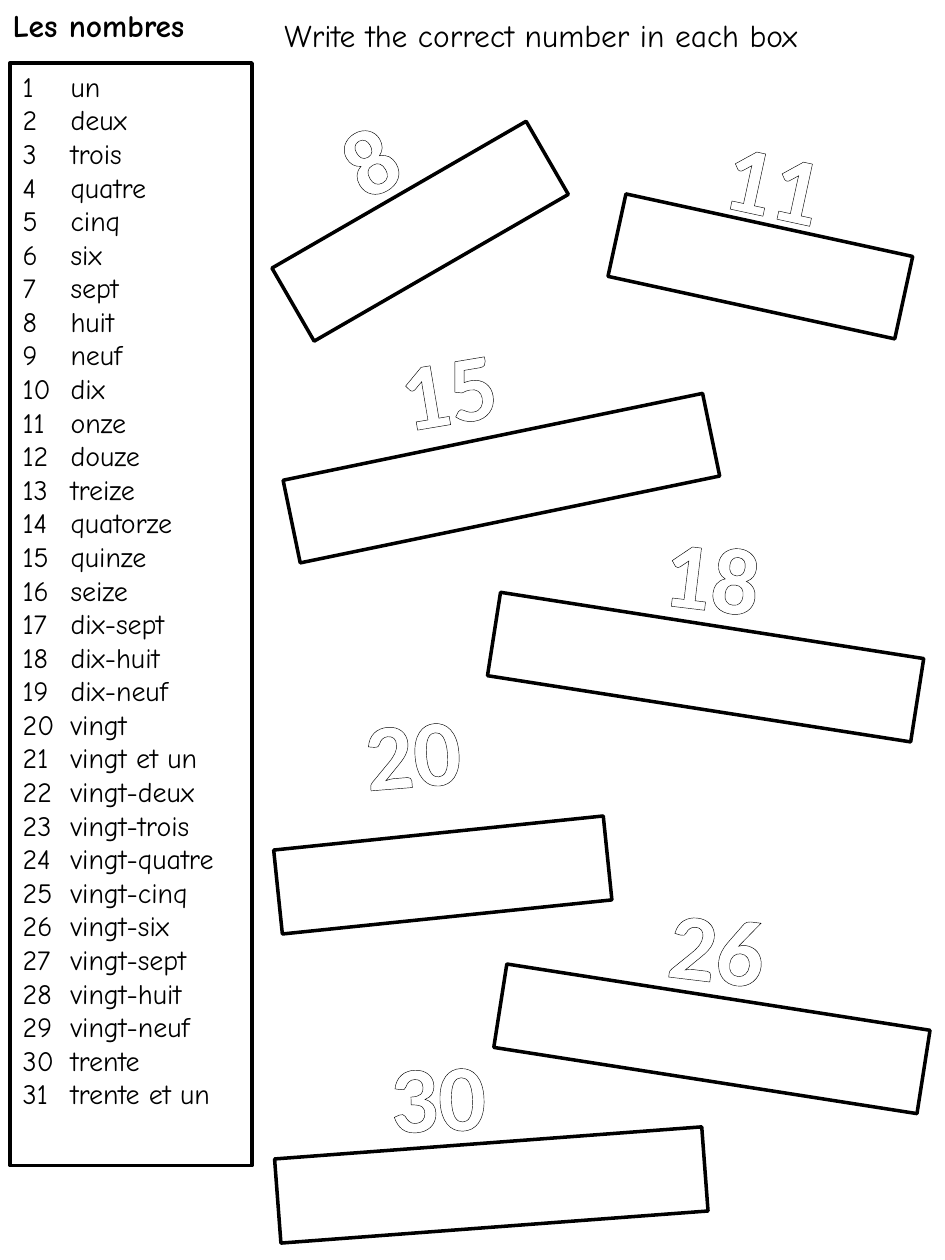
import lxml.etree
import pptx
import pptx.dml.color
import pptx.enum.shapes
import pptx.enum.text
import pptx.oxml.ns
import pptx.util

Inches = pptx.util.Inches
Pt = pptx.util.Pt
MSO_AUTO_SIZE = pptx.enum.text.MSO_AUTO_SIZE
MSO_ANCHOR = pptx.enum.text.MSO_ANCHOR
PP_ALIGN = pptx.enum.text.PP_ALIGN

BLACK = "000000"
WHITE = "FFFFFF"
HEADING = {"name": "Comic Neue", "size": Pt(18), "bold": True}
INSTRUCTION = {"name": "Comic Neue", "size": Pt(18), "bold": False}
ENTRY = {"name": "Comic Neue", "size": Pt(16), "bold": False}
NUMERAL = {"name": "Calibri", "size": Pt(54), "bold": True}

NUMBER_WORDS = [
    "un", "deux", "trois", "quatre", "cinq", "six", "sept", "huit", "neuf", "dix",
    "onze", "douze", "treize", "quatorze", "quinze", "seize", "dix-sept", "dix-huit",
    "dix-neuf", "vingt", "vingt et un", "vingt-deux", "vingt-trois", "vingt-quatre",
    "vingt-cinq", "vingt-six", "vingt-sept", "vingt-huit", "vingt-neuf", "trente",
    "trente et un",
]

ANSWER_HEIGHT = 0.67
NUMERAL_HEIGHT = 1.01
EXERCISES = [
    ("8", (2.63, 0.75, 0.59), 330, (2.17, 1.5, 2.33), 330),
    ("11", (5.66, 0.93, 0.97), 12.3, (4.87, 1.78, 2.33), 12.3),
    ("15", (3.07, 2.57, 0.97), 350.4, (2.28, 3.46, 3.4), 348.3),
    ("18", (5.17, 4.05, 0.97), 6.9, (3.9, 4.96, 3.4), 8.9),
    ("20", (2.79, 5.45, 0.97), 355.4, (2.2, 6.61, 2.63), 354.1),
    ("26", (5.21, 7, 0.97), 6.9, (3.95, 7.91, 3.4), 8.9),
    ("30", (2.99, 8.18, 0.97), 357.8, (2.2, 9.07, 3.4), 355.7),
]


def color(value):
    return pptx.dml.color.RGBColor.from_string(value)


def set_attributes(target, values):
    for name, value in values.items():
        setattr(target, name, value)


def lengths(box):
    return [Inches(value) for value in box]


def place(shape, box):
    set_attributes(shape, dict(zip(("left", "top", "width", "height"), lengths(box))))


def outline_box(shape):
    shape.fill.solid()
    shape.fill.fore_color.rgb = color(WHITE)
    shape.line.color.rgb = color(BLACK)
    shape.line.width = Pt(2)


def write(paragraph, text, font_format, text_color=BLACK, alignment=PP_ALIGN.LEFT):
    paragraph.alignment = alignment
    run = paragraph.add_run()
    run.text = text
    set_attributes(run.font, font_format)
    run.font.color.rgb = color(text_color)
    return run


def outline_text(run):
    properties = run.font._element
    line = lxml.etree.Element(pptx.oxml.ns.qn("a:ln"), w=str(Pt(0.8)))
    fill = lxml.etree.SubElement(line, pptx.oxml.ns.qn("a:solidFill"))
    lxml.etree.SubElement(fill, pptx.oxml.ns.qn("a:srgbClr"), val=BLACK)
    properties.insert(0, line)


def number_paragraph(paragraph):
    properties = paragraph._p.get_or_add_pPr()
    properties.set("marL", str(Inches(0.38)))
    properties.set("indent", str(Inches(-0.38)))
    for tag, attributes in (
        ("a:buFont", {"typeface": "+mj-lt"}),
        ("a:buAutoNum", {"type": "arabicPlain"}),
    ):
        lxml.etree.SubElement(properties, pptx.oxml.ns.qn(tag), attributes)


def add_heading(slide, box):
    title = slide.shapes.title
    place(title, box)
    set_attributes(title.text_frame, {
        "word_wrap": True,
        "auto_size": MSO_AUTO_SIZE.SHAPE_TO_FIT_TEXT,
        "vertical_anchor": MSO_ANCHOR.TOP,
    })
    write(title.text_frame.paragraphs[0], "Les nombres", HEADING)


def add_number_list(slide, box):
    body = slide.placeholders[1]
    place(body, box)
    outline_box(body)
    frame = body.text_frame
    set_attributes(frame, {
        "word_wrap": True,
        "auto_size": MSO_AUTO_SIZE.NONE,
        "vertical_anchor": MSO_ANCHOR.TOP,
    })
    for index, word in enumerate(NUMBER_WORDS):
        paragraph = frame.add_paragraph() if index else frame.paragraphs[0]
        number_paragraph(paragraph)
        paragraph.space_before = Pt(0)
        write(paragraph, word, ENTRY)


def add_instruction(slide, box):
    frame = slide.shapes.add_textbox(*lengths(box)).text_frame
    set_attributes(frame, {
        "word_wrap": True, "auto_size": MSO_AUTO_SIZE.SHAPE_TO_FIT_TEXT,
    })
    write(frame.paragraphs[0], "Write the correct number in each box", INSTRUCTION)


def add_answer_box(slide, box, rotation):
    shape = slide.shapes.add_shape(
        pptx.enum.shapes.MSO_SHAPE.RECTANGLE, *lengths(box))
    shape.shadow.inherit = False
    shape.rotation = rotation
    outline_box(shape)


def add_numeral(slide, text, box, rotation):
    shape = slide.shapes.add_textbox(*lengths(box))
    shape.rotation = rotation
    set_attributes(shape.text_frame, {
        "word_wrap": False, "auto_size": MSO_AUTO_SIZE.SHAPE_TO_FIT_TEXT,
    })
    run = write(shape.text_frame.paragraphs[0], text, NUMERAL, WHITE, PP_ALIGN.CENTER)
    outline_text(run)


def main():
    presentation = pptx.Presentation()
    presentation.slide_width = Inches(7.5)
    presentation.slide_height = Inches(10)
    slide = presentation.slides.add_slide(presentation.slide_layouts[1])
    add_heading(slide, (0, 0, 3.69, 0.4))
    add_number_list(slide, (0.08, 0.5, 1.92, 8.75))
    add_instruction(slide, (2.16, 0.08, 5.34, 0.4))
    for text, numeral_box, numeral_rotation, answer_box, answer_rotation in EXERCISES:
        add_answer_box(slide, (*answer_box, ANSWER_HEIGHT), answer_rotation)
        add_numeral(slide, text, (*numeral_box, NUMERAL_HEIGHT), numeral_rotation)
    presentation.save("out.pptx")


if __name__ == "__main__":
    main()
